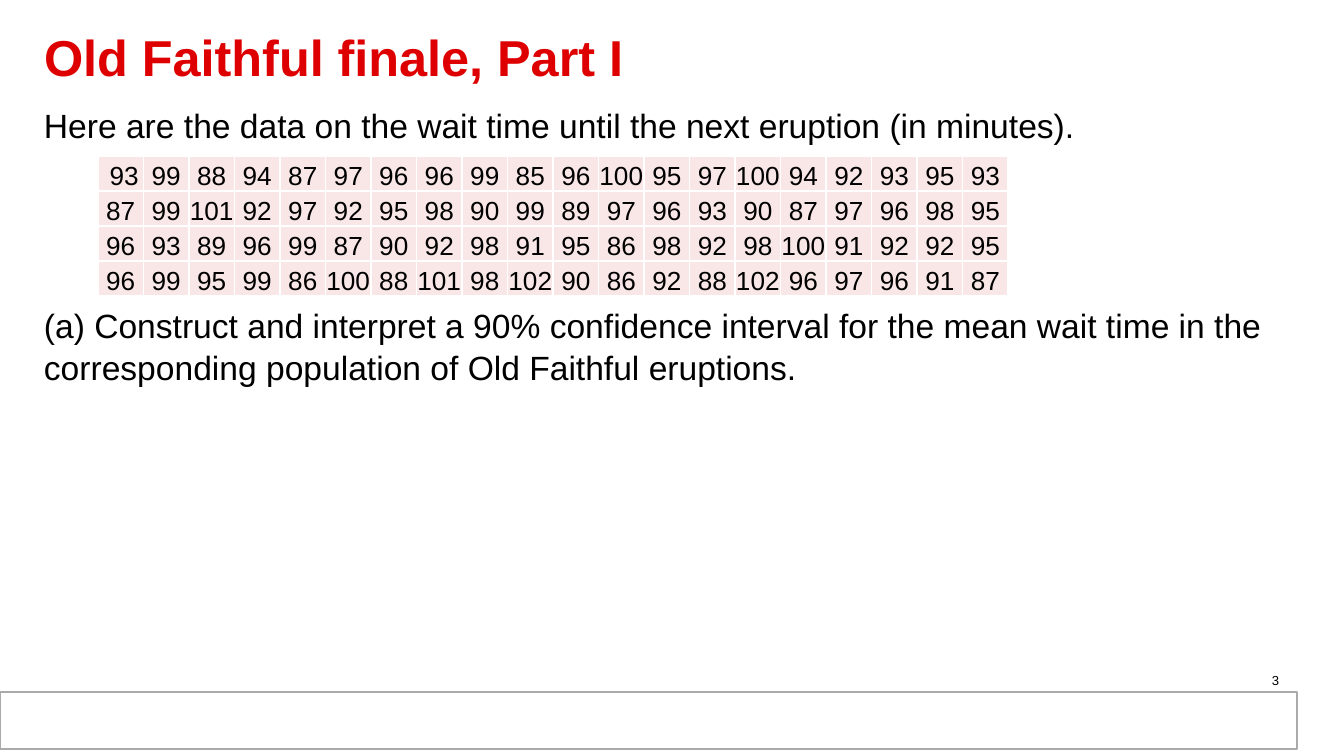
from lxml import etree
from pptx import Presentation
from pptx import util as u
from pptx.dml.color import RGBColor
from pptx.enum import shapes, text
from pptx.oxml.ns import qn

TITLE = "Old Faithful finale, Part I"
BODY = [
    "Here are the data on the wait time until the next eruption (in minutes).",
    "(a) Construct and interpret a 90% confidence interval for the mean wait time "
    "in the corresponding population of Old Faithful eruptions.",
]
PAGE = "3"
WAITS = [
    [93, 99, 88, 94, 87, 97, 96, 96, 99, 85, 96, 100, 95, 97, 100, 94, 92, 93, 95, 93],
    [87, 99, 101, 92, 97, 92, 95, 98, 90, 99, 89, 97, 96, 93, 90, 87, 97, 96, 98, 95],
    [96, 93, 89, 96, 99, 87, 90, 92, 98, 91, 95, 86, 98, 92, 98, 100, 91, 92, 92, 95],
    [96, 99, 95, 99, 86, 100, 88, 101, 98, 102, 90, 86, 92, 88, 102, 96, 97, 96, 91, 87],
]
COLORS = {"title": "DE0000", "text": "000000", "cell": "F9E7E7",
          "white": "FFFFFF", "footer": "AAAAAA"}
FONT = "Arial"
TABLE_GAP = 85  # points left between the body paragraphs for the table


def px(n):
    return u.Emu(round(n * 914400 / 134.4))


def rgb(name):
    return RGBColor.from_string(COLORS[name])


def style(p, size, color="text", bold=False):
    p.font.name, p.font.size, p.font.bold = FONT, u.Pt(size), bold
    p.font.color.rgb = rgb(color)


def add_text(slide, box, paragraphs, size, color="text", bold=False,
             anchor=text.MSO_ANCHOR.TOP, align=text.PP_ALIGN.LEFT,
             spacing=1.0, gap=0):
    tf = slide.shapes.add_textbox(*map(px, box)).text_frame
    tf.word_wrap = True
    tf.vertical_anchor = anchor
    tf.margin_left = tf.margin_right = px(10)
    tf.margin_top = tf.margin_bottom = px(5)
    for i, words in enumerate(paragraphs):
        p = tf.add_paragraph() if i else tf.paragraphs[0]
        p.text, p.alignment, p.line_spacing = words, align, spacing
        if i:
            p.space_before = u.Pt(gap)
        style(p, size, color, bold)


def add_borders(cell):
    props = cell._tc.get_or_add_tcPr()
    for i, side in enumerate(("lnL", "lnR", "lnT", "lnB")):
        ln = etree.Element(qn("a:" + side), w=str(u.Pt(1)))
        fill = etree.SubElement(ln, qn("a:solidFill"))
        etree.SubElement(fill, qn("a:srgbClr"), val=COLORS["white"])
        props.insert(i, ln)


def add_wait_table(slide, left, top, width, row_height):
    rows, cols = len(WAITS), len(WAITS[0])
    table = slide.shapes.add_table(rows, cols, px(left), px(top), px(width),
                                   px(rows * row_height)).table
    table.first_row = table.horz_banding = False
    for col in table.columns:
        col.width = px(width / cols)
    for row, waits in zip(table.rows, WAITS):
        row.height = px(row_height)
        for cell, wait in zip(row.cells, waits):
            cell.margin_left = cell.margin_right = 0
            cell.margin_top = cell.margin_bottom = 0
            cell.vertical_anchor = text.MSO_ANCHOR.BOTTOM
            cell.fill.solid()
            cell.fill.fore_color.rgb = rgb("cell")
            add_borders(cell)
            p = cell.text_frame.paragraphs[0]
            p.text, p.alignment = str(wait), text.PP_ALIGN.CENTER
            p.line_spacing = 1.07
            style(p, 14)
    table.cell(0, 0).margin_left = px(7)


prs = Presentation()
prs.slide_width, prs.slide_height = px(1344), px(756)
s = prs.slides.add_slide(prs.slide_layouts[6])

footer = s.shapes.add_shape(shapes.MSO_SHAPE.RECTANGLE,
                            px(0), px(692), px(1297), px(57))
footer.shadow.inherit = False
footer.fill.solid()
footer.fill.fore_color.rgb = rgb("white")
footer.line.color.rgb = rgb("footer")
footer.line.width = u.Pt(0.75)

add_text(s, (34, 16, 1243, 90), [TITLE], 27, "title", True,
         anchor=text.MSO_ANCHOR.MIDDLE, spacing=0.85)
add_text(s, (34, 98, 1255, 297), BODY, 18, spacing=1.04, gap=TABLE_GAP)
add_text(s, (976, 667, 313, 23), [PAGE], 7, align=text.PP_ALIGN.RIGHT)
add_wait_table(s, 98, 156, 911, 35)

prs.save("out.pptx")
